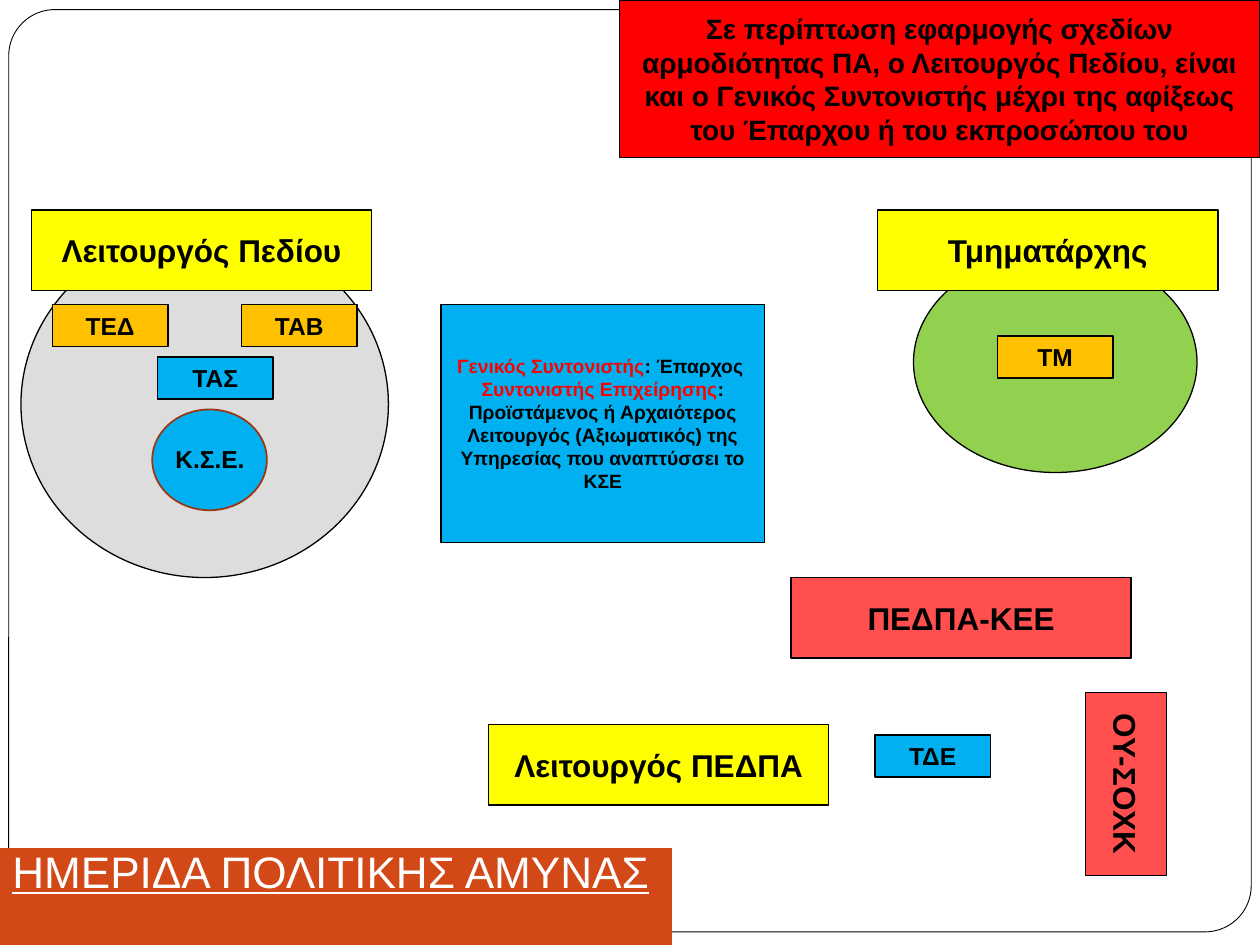
from dataclasses import dataclass

from pptx import Presentation
from pptx.dml.color import RGBColor
from pptx.enum.shapes import MSO_SHAPE as Preset
from pptx.enum.text import MSO_ANCHOR as Anchor, PP_ALIGN as Align
from pptx.util import Pt

COLOURS = {
    "black": "000000", "white": "FFFFFF", "grey": "DDDDDD",
    "green": "92D050", "yellow": "FFFF00", "amber": "FFC000",
    "blue": "00B0F0", "coral": "FF4F4F", "red": "FF0000",
    "orange": "D34817", "rust": "9C3511",
}
FONT = "Arial"
TAG_SIZE = (66, 24)
ROLE_SIZE = (194.4, 46)


@dataclass
class Part:
    left: float
    top: float
    width: float
    height: float
    fill: str
    text: str = ""
    size: float = 14
    preset: Preset = Preset.RECTANGLE
    line: str | None = "black"
    weight: float = 0.75
    turn: float = 0


def tag(left: float, top: float, fill: str, text: str) -> Part:
    return Part(left, top, *TAG_SIZE, fill, text)


def role(left: float, top: float, fill: str, text: str) -> Part:
    return Part(left, top, *ROLE_SIZE, fill, text, 18)


def zone(left: float, top: float, width: float, height: float, fill: str) -> Part:
    return Part(left, top, width, height, fill, preset=Preset.OVAL)


def colour(name: str) -> RGBColor:
    return RGBColor.from_string(COLOURS[name])


def style(para, size: float, name: str = "black", bold: bool = True) -> None:
    para.font.name = FONT
    para.font.size = Pt(size)
    para.font.bold = bold
    para.font.color.rgb = colour(name)
    para.alignment = Align.CENTER


def draw(page, part: Part):
    box = page.shapes.add_shape(part.preset, Pt(part.left), Pt(part.top),
                                Pt(part.width), Pt(part.height))
    box.shadow.inherit = False
    box.rotation = part.turn
    box.fill.solid()
    box.fill.fore_color.rgb = colour(part.fill)
    if part.line:
        box.line.color.rgb = colour(part.line)
        box.line.width = Pt(part.weight)
    else:
        box.line.fill.background()
    if part.text:
        para = box.text_frame.paragraphs[0]
        para.text = part.text
        style(para, part.size)
    return box


def draw_footer(page) -> None:
    box = draw(page, Part(0, 484.6, 384, 55.4, "orange",
                          "ΗΜΕΡΙΔΑ ΠΟΛΙΤΙΚΗΣ ΑΜΥΝΑΣ", line=None))
    box.text_frame.vertical_anchor = Anchor.TOP
    para = box.text_frame.paragraphs[0]
    style(para, 25.2, "white", bold=False)
    para.alignment = Align.LEFT
    para.line_spacing = 0.8
    para.font.underline = True


def draw_command_post(page) -> None:
    draw(page, Part(87, 234, 65.5, 57.6, "blue", preset=Preset.OVAL,
                    line="rust", weight=1))
    label = page.shapes.add_textbox(Pt(78), Pt(250), Pt(84), Pt(22))
    label.text_frame.word_wrap = True
    para = label.text_frame.paragraphs[0]
    para.text = "Κ.Σ.Ε."
    style(para, 14)


def draw_coordinators(page) -> None:
    duties = [
        ("Γενικός Συντονιστής", ": Έπαρχος "),
        ("Συντονιστής Επιχείρησης",
         ": Προϊστάμενος ή Αρχαιότερος Λειτουργός (Αξιωματικός) "
         "της Υπηρεσίας που αναπτύσσει το ΚΣΕ"),
    ]
    frame = draw(page, Part(252, 174, 185, 136, "blue")).text_frame
    for index, (title, holder) in enumerate(duties):
        para = frame.add_paragraph() if index else frame.paragraphs[0]
        style(para, 11)
        for text, name in ((title, "red"), (holder, "black")):
            span = para.add_run()
            span.text = text
            span.font.color.rgb = colour(name)


PARTS = [
    # Field area and its teams
    zone(12, 132, 210, 198, "grey"),
    tag(30, 174, "amber", "ΤΕΔ"),
    tag(138, 174, "amber", "ΤΑΒ"),
    tag(90, 204, "blue", "ΤΑΣ"),
    # Operations centre
    role(452, 330, "coral", "ΠΕΔΠΑ-ΚΕΕ"),
    tag(500, 420, "blue", "ΤΔΕ"),
    Part(591.2, 425, 104.4, 46, "coral", "ΟΥ-ΣΟΧΚ", 18, turn=90),
    # Section area
    zone(522, 144, 162, 126, "green"),
    tag(570, 192, "amber", "ΤΜ"),
    # Officers in charge
    role(18, 120, "yellow", "Λειτουργός Πεδίου"),
    role(279.2, 414, "yellow", "Λειτουργός ΠΕΔΠΑ"),
    role(501.6, 120, "yellow", "Τμηματάρχης"),
    # Note at the top
    Part(354, 0, 366, 90, "red",
         "Σε περίπτωση εφαρμογής σχεδίων αρμοδιότητας ΠΑ, ο Λειτουργός "
         "Πεδίου, είναι και ο Γενικός Συντονιστής μέχρι της αφίξεως "
         "του Έπαρχου ή του εκπροσώπου του", 16),
]


def main() -> None:
    deck = Presentation()
    deck.slide_width, deck.slide_height = Pt(720), Pt(540)
    page = deck.slides.add_slide(deck.slide_layouts[6])

    # Rounded page frame
    border = draw(page, Part(5, 5.5, 710, 527, "white",
                             preset=Preset.ROUNDED_RECTANGLE, weight=0.5))
    border.adjustments[0] = 0.05

    for part in PARTS:
        draw(page, part)
    draw_footer(page)
    draw_command_post(page)
    draw_coordinators(page)
    deck.save("out.pptx")


if __name__ == "__main__":
    main()
